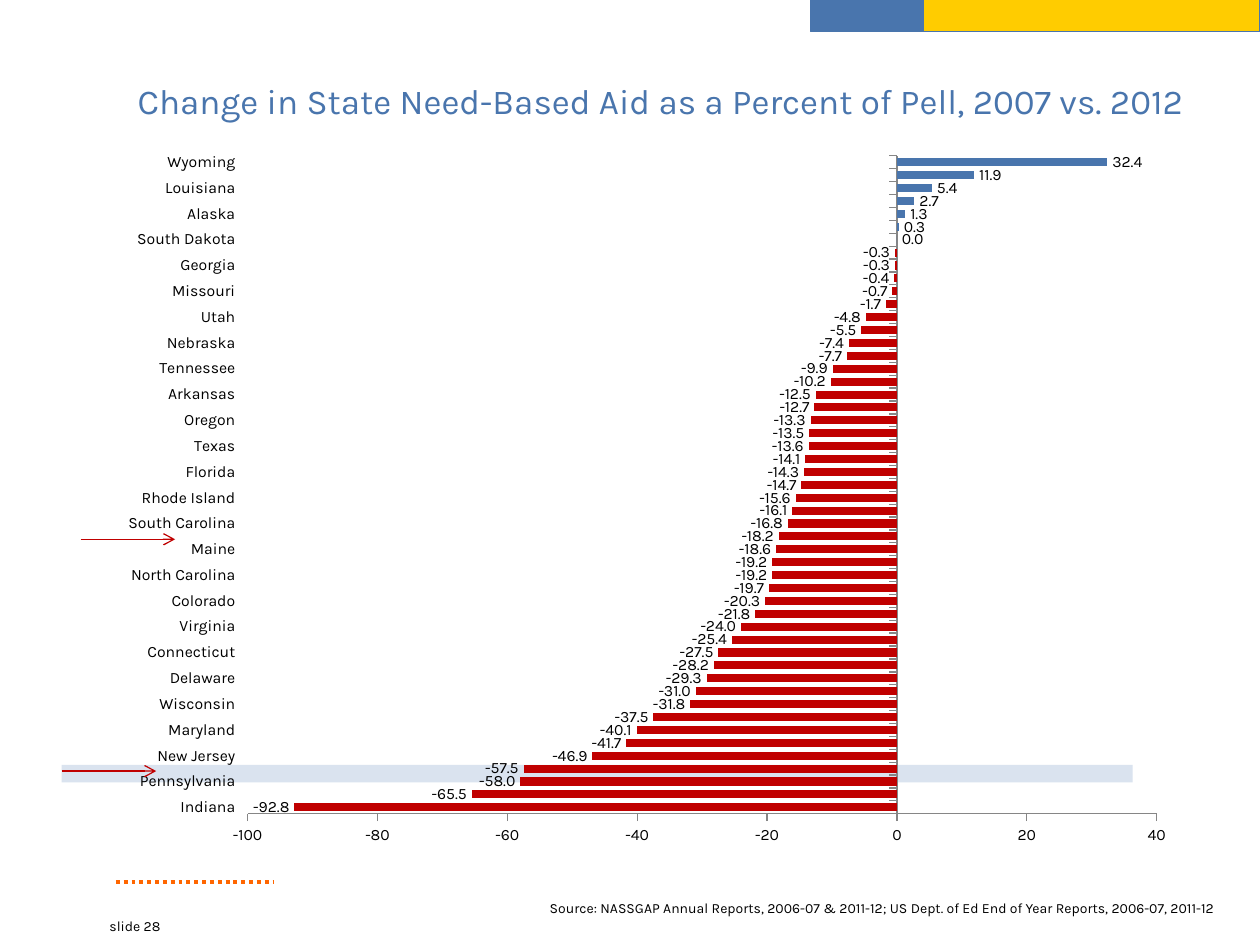
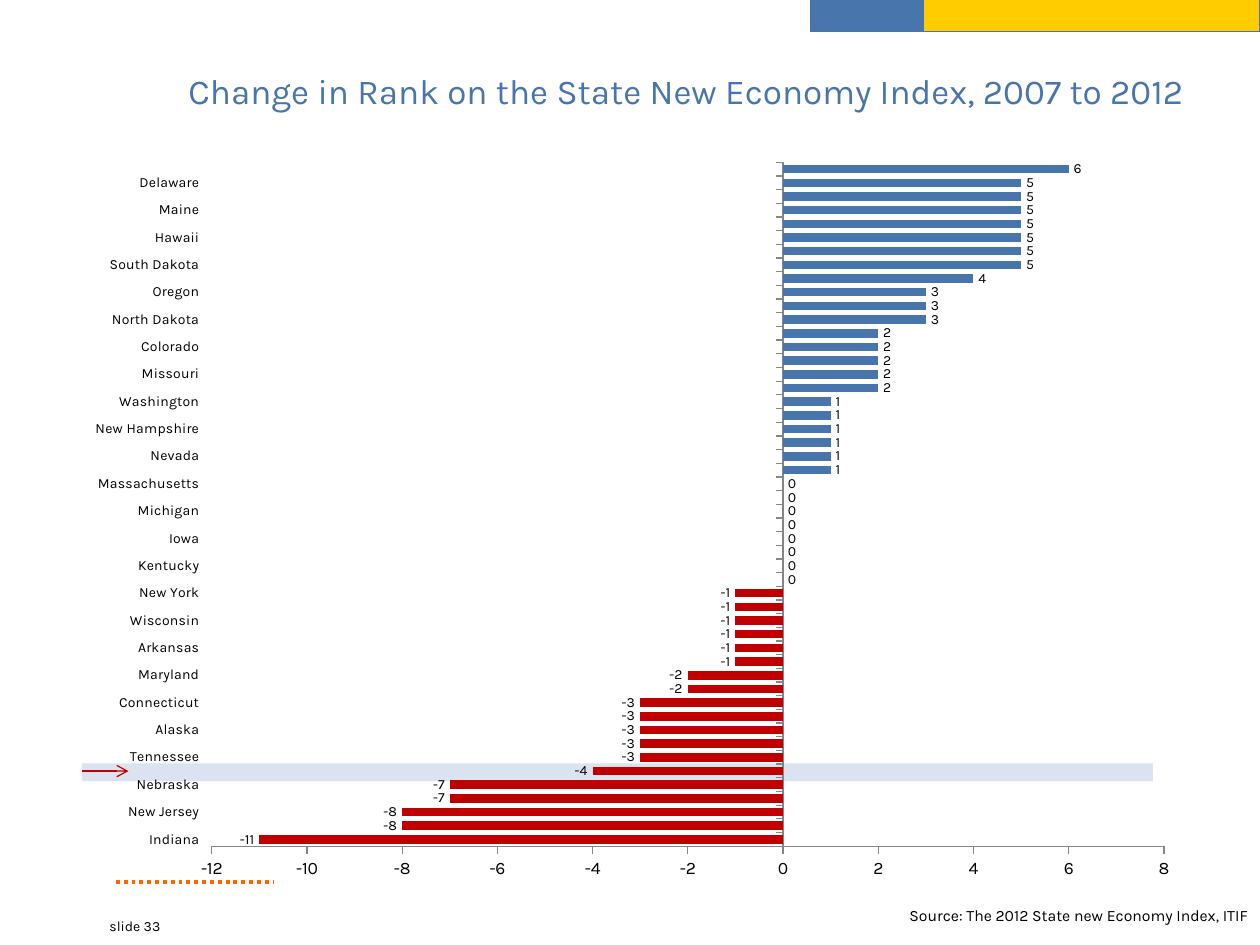
from lxml import etree
from pptx import Presentation
from pptx.chart.data import CategoryChartData
from pptx.dml.color import RGBColor
from pptx.enum.chart import XL_CHART_TYPE, XL_LABEL_POSITION, XL_TICK_LABEL_POSITION, XL_TICK_MARK
from pptx.enum.dml import MSO_LINE
from pptx.enum.shapes import MSO_CONNECTOR, MSO_SHAPE
from pptx.enum.text import MSO_ANCHOR, PP_ALIGN
from pptx.oxml import parse_xml
from pptx.oxml.ns import nsdecls, qn
from pptx.util import Inches, Pt

BLUE, YELLOW, ORANGE, RED = "4975AD", "FFCC00", "FF6600", "C00000"
PALE, GREY, BLACK = "DAE3EF", "868686", "000000"

AID_STATES = (
    "Indiana, Minnesota, Pennsylvania, Illinois, New Jersey, New York, Maryland, Washington, "
    "Wisconsin, Ohio, Delaware, Massachusetts, Connecticut, Kentucky, Virginia, Iowa, Colorado, "
    "Vermont, North Carolina, Nevada, Maine, Nation, South Carolina, West Virginia, Rhode Island, "
    "California, Florida, Michigan, Texas, New Mexico, Oregon, New Hampshire, Arkansas, Oklahoma, "
    "Tennessee, Kansas, Nebraska, Montana, Utah, Arizona, Missouri, Idaho, Georgia, Mississippi, "
    "South Dakota, Alabama, Alaska, Hawaii, Louisiana, North Dakota, Wyoming"
).split(", ")
AID_CHANGES = [
    -92.8, -65.5, -58, -57.5, -46.9, -41.7, -40.1, -37.5, -31.8, -31, -29.3, -28.2, -27.5,
    -25.4, -24, -21.8, -20.3, -19.7, -19.2, -19.2, -18.6, -18.2, -16.8, -16.1, -15.6, -14.7,
    -14.3, -14.1, -13.6, -13.5, -13.3, -12.7, -12.5, -10.2, -9.9, -7.7, -7.4, -5.5, -4.8,
    -1.7, -0.7, -0.4, -0.3, -0.3, 0, 0.3, 1.3, 2.7, 5.4, 11.9, 32.4,
]
RANK_STATES = (
    "Indiana, Rhode Island, New Jersey, Oklahoma, Nebraska, Illinois, Tennessee, Ohio, Alaska, "
    "Texas, Connecticut, Minnesota, Maryland, Mississippi, Arkansas, South Carolina, Wisconsin, "
    "Pennsylvania, New York, Alabama, Kentucky, Louisiana, Iowa, Idaho, Michigan, Georgia, "
    "Massachusetts, West Virginia, Nevada, North Carolina, New Hampshire, California, Washington, "
    "Wyoming, Missouri, Florida, Colorado, Virginia, North Dakota, New Mexico, Oregon, Utah, "
    "South Dakota, Montana, Hawaii, Kansas, Maine, Vermont, Delaware, Arizona"
).split(", ")
RANK_CHANGES = [
    -11, -8, -8, -7, -7, -4, -3, -3, -3, -3, -3, -2, -2, -1, -1, -1, -1, -1, -1,
    0, 0, 0, 0, 0, 0, 0, 0, 1, 1, 1, 1, 1, 1, 2, 2, 2, 2, 2, 3, 3, 3, 4, 5, 5, 5, 5, 5, 5, 5, 6,
]


def color(value):
    """Turn a hex string into a colour."""
    return RGBColor.from_string(value)


def apply(target, values):
    """Set each named attribute on the target."""
    for name, value in values.items():
        setattr(target, name, value)


class Deck:
    """Hold the presentation style and the current slide."""

    font_name = "Karla"

    def __init__(self):
        """Start an empty presentation."""
        self.presentation = Presentation()
        apply(self.presentation, {"slide_width": Inches(10), "slide_height": Inches(7.5)})
        self.slide = None

    def style_font(self, font, size, value=BLACK):
        """Give a font the deck's typeface with a size and colour."""
        apply(font, {"name": self.font_name, "size": Pt(size)})
        font.color.rgb = color(value)

    def new_slide(self, title, title_height, number, highlight):
        """Add a slide with its bands, highlight row, title and number."""
        self.slide = self.presentation.slides.add_slide(self.presentation.slide_layouts[6])
        self.line(0.92, 7, 1.25, ORANGE, 2.25).line.dash_style = MSO_LINE.ROUND_DOT
        self.box(6.43, -0.01, 0.91, 0.26, BLUE, BLUE)
        self.box(7.33, -0.01, 2.67, 0.26, YELLOW, BLUE)
        self.box(*highlight, 8.5, 0.14, PALE)
        self.text(title, 0.5, 0.27, 9, title_height, 20, BLUE, PP_ALIGN.RIGHT, MSO_ANCHOR.MIDDLE)
        self.text(f"slide {number}", 0.77, 7.23, 1, 0.27, 8)

    def box(self, left, top, width, height, fill, outline=None):
        """Add a filled rectangle."""
        shape = self.slide.shapes.add_shape(
            MSO_SHAPE.RECTANGLE, Inches(left), Inches(top), Inches(width), Inches(height))
        shape.shadow.inherit = False
        shape.fill.solid()
        shape.fill.fore_color.rgb = color(fill)
        if outline:
            shape.line.color.rgb = color(outline)
            shape.line.width = Pt(0.75)
        else:
            shape.line.fill.background()

    def text(self, words, left, top, width, height, size, value=BLACK,
             align=PP_ALIGN.LEFT, anchor=MSO_ANCHOR.TOP, wrap=True):
        """Add a one-paragraph text box."""
        shape = self.slide.shapes.add_textbox(
            Inches(left), Inches(top), Inches(width), Inches(height))
        apply(shape.text_frame, {"word_wrap": wrap, "vertical_anchor": anchor})
        paragraph = shape.text_frame.paragraphs[0]
        apply(paragraph, {"text": words, "alignment": align})
        self.style_font(paragraph.runs[0].font, size, value)

    def line(self, left, top, length, value, width):
        """Add a horizontal line."""
        connector = self.slide.shapes.add_connector(
            MSO_CONNECTOR.STRAIGHT, Inches(left), Inches(top), Inches(left + length), Inches(top))
        connector.line.color.rgb = color(value)
        connector.line.width = Pt(width)
        etree.SubElement(connector._element.spPr, qn("a:effectLst"))
        return connector

    def arrow(self, left, top, length):
        """Add a red arrow pointing right."""
        connector = self.line(left, top, length, RED, 0.75)
        etree.SubElement(connector.line._get_or_add_ln(), qn("a:tailEnd"), type="arrow")

    def bar_chart(self, states, changes, frame, plot_layout, scale, sizes, number_format):
        """Add a bar chart with gains in blue and losses in red."""
        data = CategoryChartData()
        data.categories = states
        data.add_series("Series 1", changes)
        chart = self.slide.shapes.add_chart(
            XL_CHART_TYPE.BAR_CLUSTERED, *map(Inches, frame), data).chart
        apply(chart, {"has_legend": False, "has_title": False})
        axis_size, state_size, label_size = sizes
        self.style_font(chart.font, axis_size)
        self.style_axis(chart.category_axis, state_size)
        chart.category_axis.tick_label_position = XL_TICK_LABEL_POSITION.LOW
        self.style_axis(chart.value_axis, axis_size)
        apply(chart.value_axis, dict(zip(("minimum_scale", "maximum_scale", "major_unit"), scale)))

        plot = chart.plots[0]
        apply(plot, {"gap_width": 60, "vary_by_categories": False, "has_data_labels": True})
        apply(plot.data_labels, {
            "show_value": True, "position": XL_LABEL_POSITION.OUTSIDE_END,
            "number_format": number_format, "number_format_is_linked": False})
        self.style_font(plot.data_labels.font, label_size)
        series = plot.series[0]
        series.invert_if_negative = False
        self.fill_bar(series, RED)
        for index, change in enumerate(changes):
            if change >= 0:
                self.fill_bar(series.points[index], BLUE)
        self.place_plot(chart, plot_layout)

    def fill_bar(self, bar, value):
        """Fill a series or a single bar."""
        bar.format.fill.solid()
        bar.format.fill.fore_color.rgb = color(value)

    def style_axis(self, axis, size):
        """Give an axis grey lines, crossing ticks and no grid."""
        apply(axis, {
            "has_major_gridlines": False, "major_tick_mark": XL_TICK_MARK.CROSS
            if size is None else XL_TICK_MARK.OUTSIDE, "minor_tick_mark": XL_TICK_MARK.NONE})
        axis.format.line.color.rgb = color(GREY)
        axis.format.line.width = Pt(0.75)
        self.style_font(axis.tick_labels.font, size)

    def place_plot(self, chart, plot_layout):
        """Set the inner plot area and make the chart background clear."""
        plot_area = chart._chartSpace.chart.plotArea
        for old_layout in plot_area.findall(qn("c:layout")):
            plot_area.remove(old_layout)
        modes = '<c:layoutTarget val="inner"/><c:xMode val="edge"/><c:yMode val="edge"/>'
        sides = "".join(f'<c:{side} val="{share}"/>' for side, share in zip("xywh", plot_layout))
        plot_area.insert(0, parse_xml(
            f'<c:layout {nsdecls("c")}><c:manualLayout>{modes}{sides}</c:manualLayout></c:layout>'))
        clear = (f'<c:spPr {nsdecls("c", "a")}><a:noFill/>'
                 '<a:ln><a:noFill/></a:ln></c:spPr>')
        plot_area.append(parse_xml(clear))
        chart._chartSpace.chart.addnext(parse_xml(clear))


def main():
    """Build both slides and save them."""
    deck = Deck()
    deck.new_slide("Change in State Need-Based Aid as a Percent of Pell, 2007 vs. 2012",
                   1.05, 28, (0.49, 6.07))
    deck.bar_chart(AID_STATES, AID_CHANGES, (0.85, 1.1, 8.58, 5.72), (0.13, 0.024, 0.841, 0.913),
                   (-100, 40, 20), (9, 9, 9), "#,##0.0")
    deck.text("Source: NASSGAP Annual Reports, 2006-07 & 2011-12; "
              "US Dept. of Ed End of Year Reports, 2006-07, 2011-12",
              4.17, 7.09, 5.67, 0.24, 8, align=PP_ALIGN.CENTER, wrap=False)
    deck.arrow(0.49, 6.12, 0.75)
    deck.arrow(0.64, 4.28, 0.75)

    deck.new_slide("Change in Rank on the State New Economy Index, 2007 to 2012",
                   0.89, 33, (0.65, 6.06))
    deck.text("Source: The 2012 State new Economy Index, ITIF",
              6.25, 7.14, 3.75, 0.25, 9, align=PP_ALIGN.RIGHT)
    deck.bar_chart(RANK_STATES, RANK_CHANGES, (0.58, 1.17, 8.88, 5.92), (0.124, 0.02, 0.851, 0.917),
                   (-12, 8, 2), (10, 8, 8), "General")
    deck.arrow(0.65, 6.12, 0.37)
    deck.presentation.save("out.pptx")


if __name__ == "__main__":
    main()
